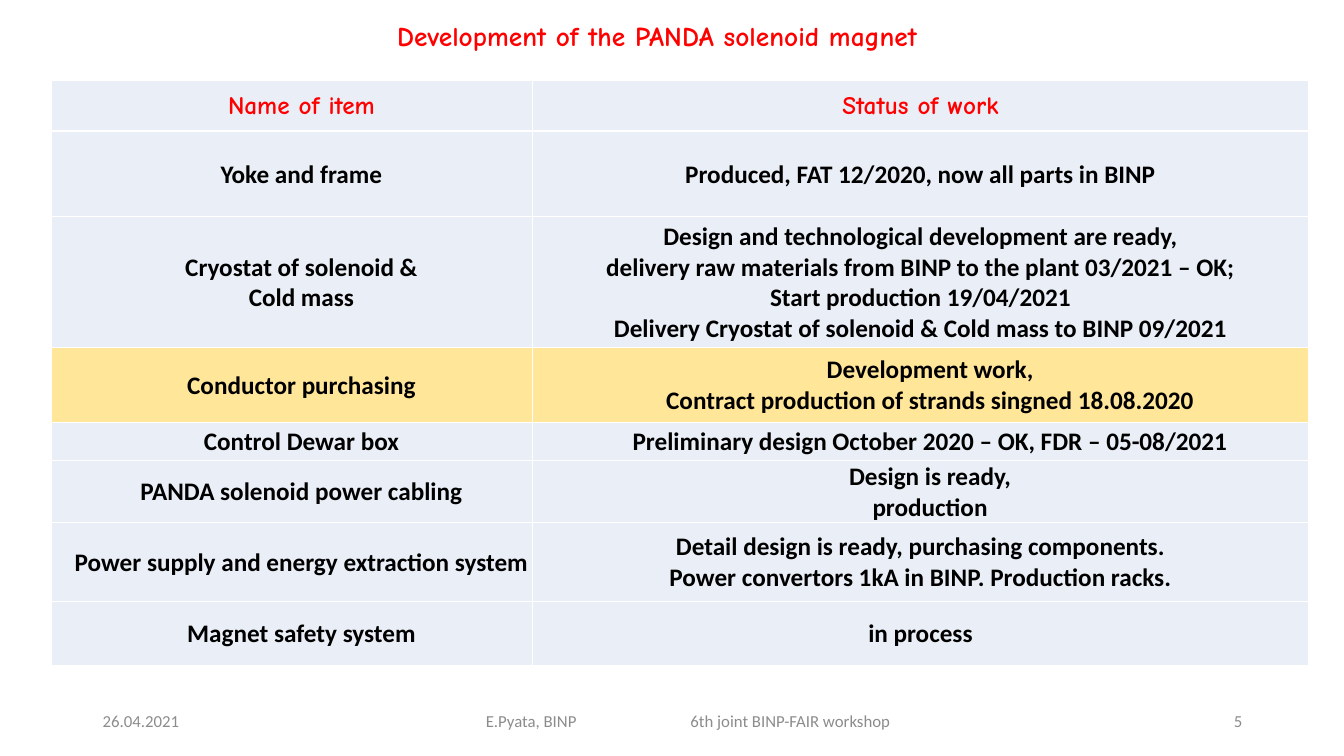
from lxml import etree
from pptx import Presentation, util as u
from pptx.dml.color import RGBColor
from pptx.enum import text
from pptx.oxml import ns

PX = 9144
RED = RGBColor(0xFF, 0x00, 0x00)
BLACK = RGBColor(0x00, 0x00, 0x00)
GREY = RGBColor(0x8C, 0x8C, 0x8C)
PALE_BLUE = RGBColor(0xEA, 0xEF, 0xF7)
YELLOW = RGBColor(0xFF, 0xE6, 0x99)
WHITE = RGBColor(0xFF, 0xFF, 0xFF)

LEFT, CENTER, RIGHT = text.PP_ALIGN.LEFT, text.PP_ALIGN.CENTER, text.PP_ALIGN.RIGHT
MIDDLE = text.MSO_ANCHOR.MIDDLE

TITLE = {"name": "Comic Neue", "size": u.Pt(19.5), "bold": True}
HEADING = {"name": "Comic Neue", "size": u.Pt(18), "bold": True}
BODY = {"name": "Calibri", "size": u.Pt(18), "bold": True}
FOOTER = {"name": "Calibri", "size": u.Pt(12), "bold": False}

COLUMNS = [477, 770]
WIDE, NARROW = 20, 1
ITEMS = [
    (50, NARROW, "Name of item", "Status of work"),
    (85, NARROW, "Yoke and frame", "Produced, FAT 12/2020, now all parts in BINP"),
    (130, NARROW, "Cryostat of solenoid &\nCold mass",
     "Design and technological development are ready,\n"
     "delivery raw materials from BINP to the plant 03/2021 – OK;\n"
     "Start production 19/04/2021\n"
     "Delivery Cryostat of solenoid & Cold mass to BINP 09/2021"),
    (74, WIDE, "Conductor purchasing",
     "Development work,\nContract production of strands singned 18.08.2020"),
    (38, WIDE, "Control Dewar box",
     "Preliminary design October 2020 – OK, FDR – 05-08/2021"),
    (59, WIDE, "PANDA solenoid power cabling", "Design is ready,\nproduction"),
    (79, NARROW, "Power supply and energy extraction system",
     "Detail design is ready, purchasing components.\n"
     "Power convertors 1kA in BINP. Production racks."),
    (63, NARROW, "Magnet safety system", "in process"),
]
HIGHLIGHTED = "Conductor purchasing"
FOOTERS = [
    (92, 300, LEFT, "26.04.2021"),
    (472, 140, LEFT, "E.Pyata, BINP"),
    (675, 230, LEFT, "6th joint BINP-FAIR workshop"),
    (942, 300, RIGHT, "5"),
]


class StatusSlide:
    """Hold the current slide and draw its text and table in one style."""

    def __init__(self, deck):
        self.slide = deck.slides.add_slide(deck.slide_layouts[6])

    def set_words(self, frame, words, font, color, align, spacing=None):
        frame.text = words
        for line in frame.paragraphs:
            for key, value in {"alignment": align, "line_spacing": spacing}.items():
                setattr(line, key, value)
            for run in line.runs:
                for key, value in font.items():
                    setattr(run.font, key, value)
                run.font.color.rgb = color

    def label(self, box, words, font, color, align, anchor=None, spacing=None):
        frame = self.slide.shapes.add_textbox(*(n * PX for n in box)).text_frame
        for key, value in {"word_wrap": True, "vertical_anchor": anchor}.items():
            setattr(frame, key, value)
        self.set_words(frame, words, font, color, align, spacing)

    def border(self, cell):
        properties = cell._tc.get_or_add_tcPr()
        for side in ("a:lnL", "a:lnR", "a:lnT", "a:lnB"):
            edge = etree.SubElement(properties, ns.qn(side), w=str(u.Pt(1)))
            fill = etree.SubElement(edge, ns.qn("a:solidFill"))
            etree.SubElement(fill, ns.qn("a:srgbClr"), val=str(WHITE))

    def cell(self, cell, words, font, color, fill, indent):
        insets = {"margin_left": indent * PX, "margin_right": PX,
                  "margin_top": PX, "margin_bottom": 0, "vertical_anchor": MIDDLE}
        for key, value in insets.items():
            setattr(cell, key, value)
        self.border(cell)
        cell.fill.solid()
        cell.fill.fore_color.rgb = fill
        self.set_words(cell.text_frame, words, font, color, CENTER)

    def table(self, left, top, columns, items):
        height = sum(item[0] for item in items)
        box = (left, top, sum(columns), height)
        grid = self.slide.shapes.add_table(
            len(items), len(columns), *(n * PX for n in box)).table
        for column, width in zip(grid.columns, columns):
            column.width = width * PX
        for index, (row_height, status_indent, item, status) in enumerate(items):
            grid.rows[index].height = row_height * PX
            font, color = (BODY, BLACK) if index else (HEADING, RED)
            fill = YELLOW if item == HIGHLIGHTED else PALE_BLUE
            self.cell(grid.cell(index, 0), item, font, color, fill, WIDE)
            self.cell(grid.cell(index, 1), status, font, color, fill, status_indent)


def main():
    deck = Presentation()
    deck.slide_width, deck.slide_height = 1333 * PX, 750 * PX
    page = StatusSlide(deck)
    for left, width, align, words in FOOTERS:
        page.label((left, 695, width, 40), words, FOOTER, GREY, align, MIDDLE)
    page.label((146, 20, 1012, 40), "Development of the PANDA solenoid magnet",
               TITLE, RED, CENTER, spacing=0.8)
    page.table(51, 80, COLUMNS, ITEMS)
    deck.save("out.pptx")


if __name__ == "__main__":
    main()
